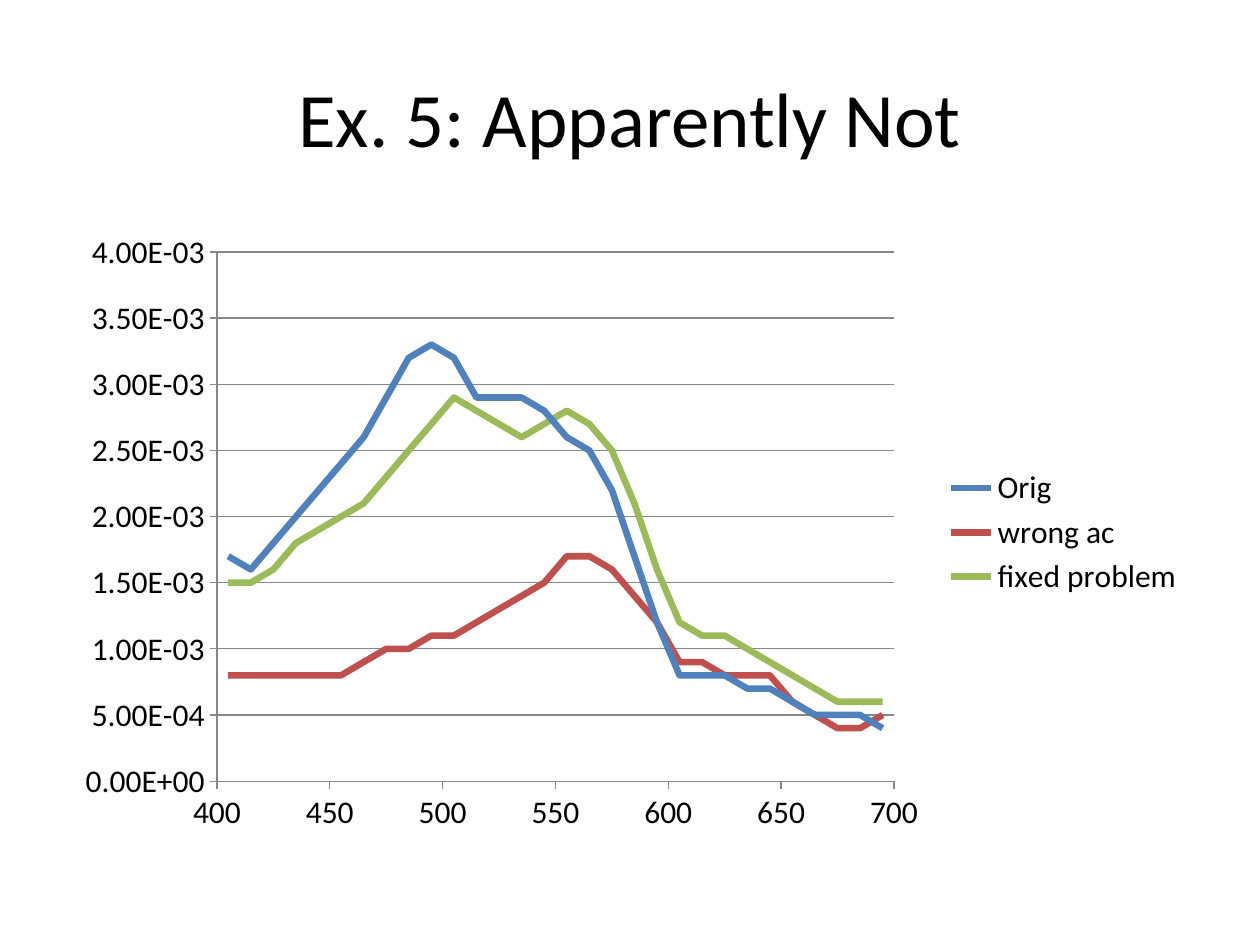
from pptx import Presentation
from pptx.chart.data import XyChartData
from pptx.dml.color import RGBColor
from pptx.enum.chart import XL_CHART_TYPE, XL_LEGEND_POSITION, XL_TICK_MARK
from pptx.enum.text import MSO_ANCHOR, PP_ALIGN
from pptx.util import Inches, Pt

BLACK = RGBColor(0x00, 0x00, 0x00)
GRAY = RGBColor(0x87, 0x87, 0x87)
BLUE = RGBColor(0x4F, 0x81, 0xBD)
RED = RGBColor(0xC0, 0x50, 0x4D)
GREEN = RGBColor(0x9B, 0xBB, 0x59)
FONT = "Calibri"

wavelengths = range(405, 700, 10)
spectra = [
    ("Orig", BLUE, [
        1.7, 1.6, 1.8, 2.0, 2.2, 2.4, 2.6, 2.9, 3.2, 3.3,
        3.2, 2.9, 2.9, 2.9, 2.8, 2.6, 2.5, 2.2, 1.7, 1.2,
        0.8, 0.8, 0.8, 0.7, 0.7, 0.6, 0.5, 0.5, 0.5, 0.4]),
    ("wrong ac", RED, [
        0.8, 0.8, 0.8, 0.8, 0.8, 0.8, 0.9, 1.0, 1.0, 1.1,
        1.1, 1.2, 1.3, 1.4, 1.5, 1.7, 1.7, 1.6, 1.4, 1.2,
        0.9, 0.9, 0.8, 0.8, 0.8, 0.6, 0.5, 0.4, 0.4, 0.5]),
    ("fixed problem", GREEN, [
        1.5, 1.5, 1.6, 1.8, 1.9, 2.0, 2.1, 2.3, 2.5, 2.7,
        2.9, 2.8, 2.7, 2.6, 2.7, 2.8, 2.7, 2.5, 2.1, 1.6,
        1.2, 1.1, 1.1, 1.0, 0.9, 0.8, 0.7, 0.6, 0.6, 0.6]),
]

prs = Presentation()
prs.slide_width, prs.slide_height = Inches(10), Inches(7.5)
slide = prs.slides.add_slide(prs.slide_layouts[6])
margin = int(prs.slide_width * 0.05)
content_width = prs.slide_width - 2 * margin

heading = slide.shapes.add_textbox(
    margin, int(prs.slide_height * 0.04), content_width, Inches(1.25)).text_frame
heading.word_wrap = True
heading.vertical_anchor = MSO_ANCHOR.MIDDLE
title = heading.paragraphs[0]
title.text = "Ex. 5: Apparently Not"
title.alignment = PP_ALIGN.CENTER
title.font.name = FONT
title.font.size = Pt(44)
title.font.color.rgb = BLACK

data = XyChartData(number_format="0.00E+00")
for name, _, thousandths in spectra:
    points = data.add_series(name)
    for wavelength, value in zip(wavelengths, thousandths):
        points.add_data_point(wavelength, round(value / 1000, 4))

chart = slide.shapes.add_chart(
    XL_CHART_TYPE.XY_SCATTER_LINES_NO_MARKERS, margin, Inches(1.75),
    content_width, int(prs.slide_height * 0.66), data).chart
chart.has_title = False
chart.font.name = FONT
chart.font.size = Pt(18)
chart.font.color.rgb = BLACK
chart.has_legend = True
chart.legend.position = XL_LEGEND_POSITION.RIGHT
chart.legend.include_in_layout = False

for series, (_, color, _) in zip(chart.plots[0].series, spectra):
    series.smooth = False
    series.format.line.width = Pt(3.75)
    series.format.line.color.rgb = color

scales = [
    (chart.category_axis, 400, 700, 50, "General", False),
    (chart.value_axis, 0, 0.004, 0.0005, "0.00E+00", True),
]
for axis, low, high, step, number_format, gridlines in scales:
    axis.minimum_scale, axis.maximum_scale, axis.major_unit = low, high, step
    axis.has_major_gridlines = gridlines
    axis.major_tick_mark = XL_TICK_MARK.OUTSIDE
    axis.minor_tick_mark = XL_TICK_MARK.NONE
    axis.tick_labels.number_format = number_format
    axis.tick_labels.number_format_is_linked = False
    axis.format.line.color.rgb = GRAY
chart.value_axis.major_gridlines.format.line.color.rgb = GRAY

prs.save("out.pptx")
